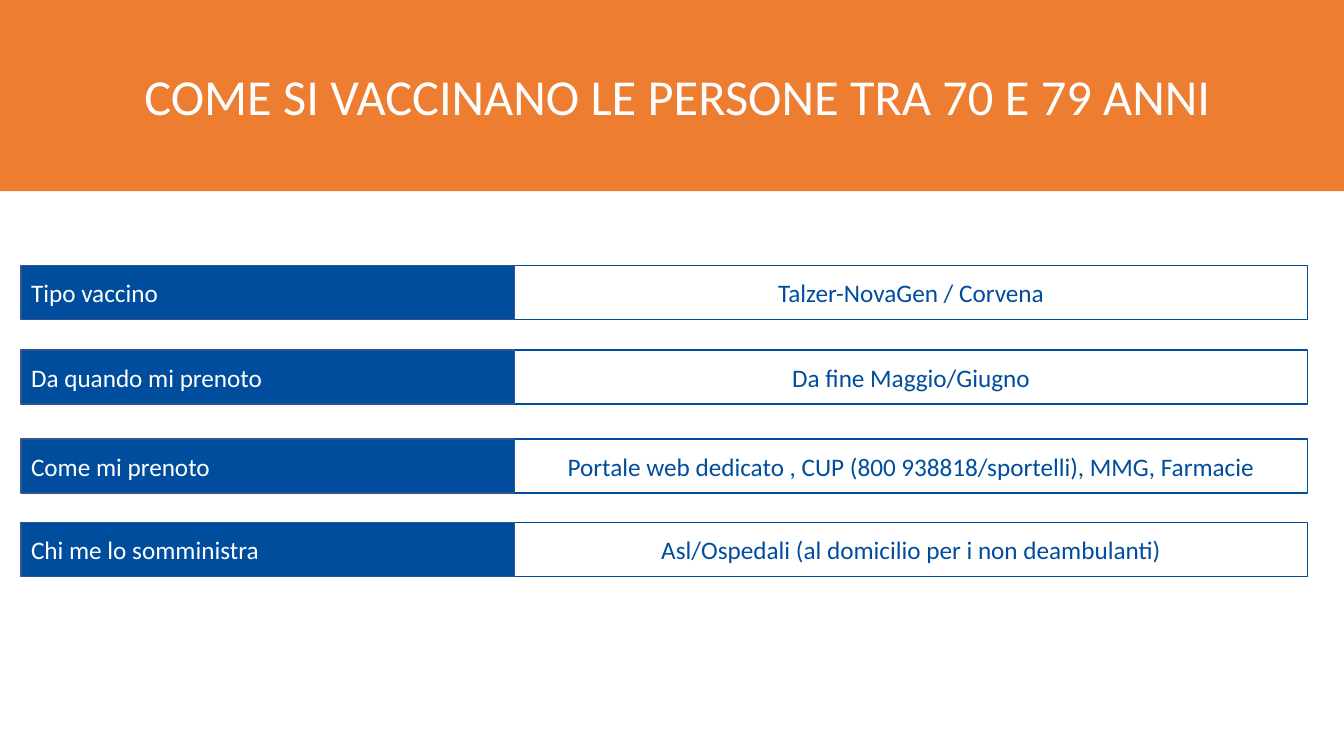
from pptx import Presentation
from pptx.dml.color import RGBColor
from pptx.enum.shapes import MSO_SHAPE
from pptx.enum.text import MSO_ANCHOR, MSO_AUTO_SIZE, PP_ALIGN
from pptx.util import Pt

RECTANGLE = MSO_SHAPE.RECTANGLE
MIDDLE = MSO_ANCHOR.MIDDLE
NO_AUTOFIT = MSO_AUTO_SIZE.NONE
LEFT, CENTER = PP_ALIGN.LEFT, PP_ALIGN.CENTER

# Content
TITLE = " COME SI VACCINANO LE PERSONE TRA 70 E 79 ANNI"
# Top of the row, question, answer
ROWS = [
    (189.7, "Tipo vaccino", "Talzer-NovaGen / Corvena"),
    (250, "Da quando mi prenoto", "Da fine Maggio/Giugno"),
    (313.5, "Come mi prenoto",
     "Portale web dedicato , CUP (800 938818/sportelli), MMG, Farmacie"),
    (373, "Chi me lo somministra",
     "Asl/Ospedali (al domicilio per i non deambulanti)"),
]

# Style and measures in points
COLORS = {"banner": "ED7D31", "blue": "004D9E", "edge": "325491", "white": "FFFFFF"}
FONT = "Calibri"
PAGE_WIDTH, PAGE_HEIGHT = 960, 540
BANNER_HEIGHT = 136.6
ROW_LEFT, ROW_HEIGHT = 15.1, 38.7
QUESTION_WIDTH, ANSWER_WIDTH = 352.4, 566.5


def color(name):
    return RGBColor.from_string(COLORS[name])


def paint(box, fill):
    box.fill.solid()
    box.fill.fore_color.rgb = color(fill)


def write(box, text, size, text_color, align):
    frame = box.text_frame
    frame.word_wrap = True
    frame.auto_size = NO_AUTOFIT
    frame.vertical_anchor = MIDDLE
    para = frame.paragraphs[0]
    para.alignment = align
    span = para.add_run()
    span.text = text
    span.font.name = FONT
    span.font.size = Pt(size)
    span.font.color.rgb = color(text_color)


def add_cell(page, left, top, width, text, fill, edge, text_color, align):
    box = page.shapes.add_shape(
        RECTANGLE, Pt(left), Pt(top), Pt(width), Pt(ROW_HEIGHT))
    box.shadow.inherit = False
    paint(box, fill)
    box.line.color.rgb = color(edge)
    box.line.width = Pt(1)
    write(box, text, 18, text_color, align)


def main():
    deck = Presentation()
    deck.slide_width, deck.slide_height = Pt(PAGE_WIDTH), Pt(PAGE_HEIGHT)
    page = deck.slides.add_slide(deck.slide_layouts[5])

    # Title banner
    banner = page.shapes.title
    banner.left, banner.top = Pt(0), Pt(0)
    banner.width, banner.height = Pt(PAGE_WIDTH), Pt(BANNER_HEIGHT)
    paint(banner, "banner")
    write(banner, TITLE, 36, "white", CENTER)

    # Question and answer rows
    for top, question, answer in ROWS:
        add_cell(page, ROW_LEFT + QUESTION_WIDTH, top, ANSWER_WIDTH, answer,
                 "white", "blue", "blue", CENTER)
        add_cell(page, ROW_LEFT, top, QUESTION_WIDTH, question,
                 "blue", "edge", "white", LEFT)

    deck.save("out.pptx")


if __name__ == "__main__":
    main()
